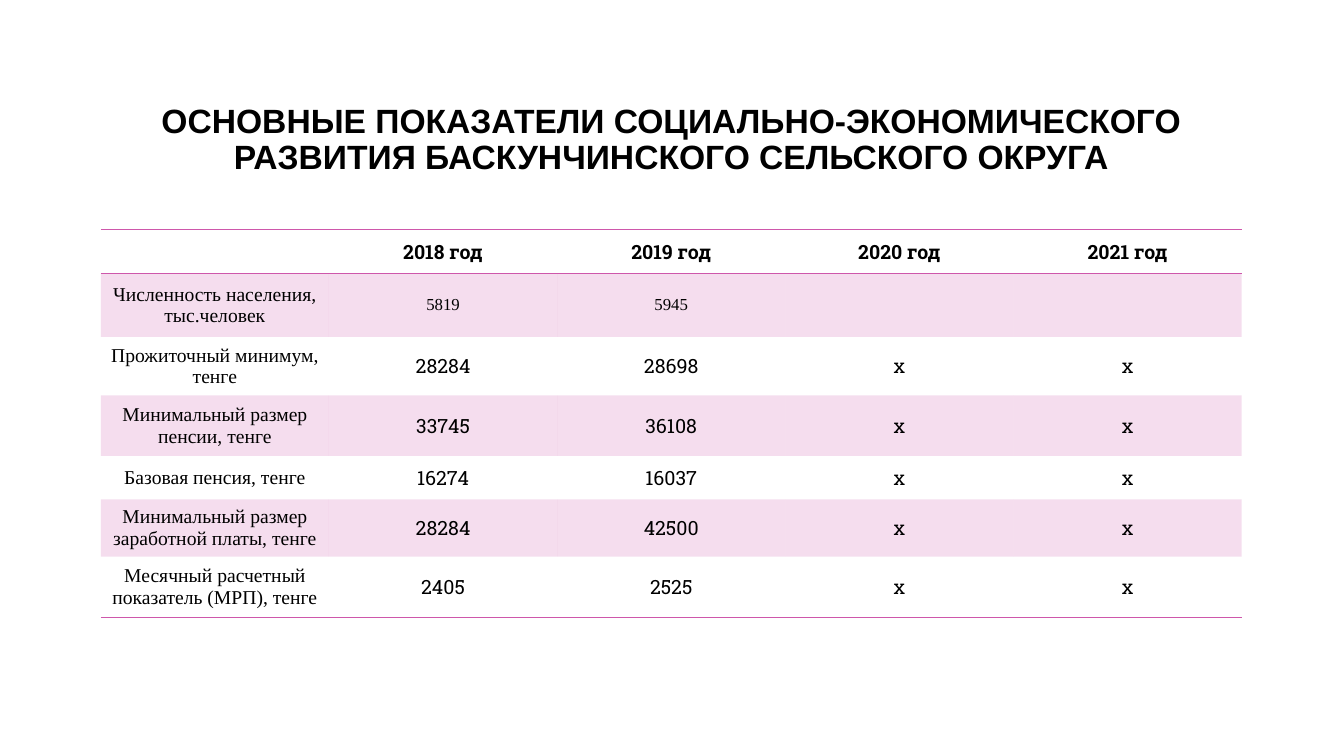
from dataclasses import dataclass
from lxml.etree import SubElement
from pptx import Presentation
from pptx.dml.color import RGBColor
from pptx.enum.text import MSO_ANCHOR, PP_ALIGN
from pptx.oxml import parse_xml
from pptx.oxml.ns import nsdecls, qn
from pptx.util import Pt


@dataclass
class Theme:
    ink: str = "000000"
    pink: str = "CE57AB"
    head: int = 24
    body: int = 14
    small: int = 12
    sans: str = "Arial"
    slab: str = "Roboto Slab"
    serif: str = "Times New Roman"


theme = Theme()


def style(para, face, size, bold=False):
    para.alignment = PP_ALIGN.CENTER
    font = para.font
    font.name, font.size, font.bold = face, Pt(size), bold
    font.color.rgb = RGBColor.from_string(theme.ink)


def rule(cell, tag):
    # Borders come before the fill in the cell properties
    cell._tc.get_or_add_tcPr().insert(0, parse_xml(
        f'<a:{tag} {nsdecls("a")} w="12700"><a:solidFill>'
        f'<a:srgbClr val="{theme.pink}"/></a:solidFill></a:{tag}>'))


deck = Presentation()
deck.slide_width, deck.slide_height = Pt(960), Pt(540)
slide = deck.slides.add_slide(deck.slide_layouts[5])

# Title
title = slide.shapes.title
title.left, title.top, title.width, title.height = Pt(72), Pt(48), Pt(815), Pt(104.4)
title.text = "ОСНОВНЫЕ ПОКАЗАТЕЛИ СОЦИАЛЬНО-ЭКОНОМИЧЕСКОГО РАЗВИТИЯ БАСКУНЧИНСКОГО СЕЛЬСКОГО ОКРУГА"
title.text_frame.vertical_anchor = MSO_ANCHOR.MIDDLE
para = title.text_frame.paragraphs[0]
para.line_spacing = 0.9
style(para, theme.sans, theme.head, True)

# Table data
rows = [
    ("", "2018 год", "2019 год", "2020 год", "2021 год"),
    ("Численность населения, тыс.человек", "5819", "5945", "", ""),
    ("Прожиточный минимум, тенге", "28284", "28698", "х", "х"),
    ("Минимальный размер пенсии, тенге", "33745", "36108", "х", "х"),
    ("Базовая пенсия, тенге", "16274", "16037", "х", "х"),
    ("Минимальный размер заработной платы, тенге", "28284", "42500", "х", "х"),
    ("Месячный расчетный показатель (МРП), тенге", "2405", "2525", "х", "х"),
]
highs = [31.3, 45.4, 41.8, 43.2, 31, 41, 43.2]

# Table frame without a built-in style
frame = slide.shapes.add_table(len(rows), 5, Pt(72), Pt(164), Pt(815), Pt(sum(highs)))
table = frame.table
table.first_row = table.horz_banding = False
table._tbl.tblPr.find(qn("a:tableStyleId")).text = "{2D5ABB26-0587-4C30-8999-92F81FD0307C}"
for col in table.columns:
    col.width = Pt(163)

# Cells
for r, (row, high) in enumerate(zip(rows, highs)):
    table.rows[r].height = Pt(high)
    for c, text in enumerate(row):
        cell = table.cell(r, c)
        cell.text = text
        cell.vertical_anchor = MSO_ANCHOR.MIDDLE
        cell.margin_left = cell.margin_right = Pt(5)
        cell.margin_top = cell.margin_bottom = 0
        face = theme.serif if c == 0 or r == 1 else theme.slab
        size = theme.small if r == 1 and c > 0 else theme.body
        style(cell.text_frame.paragraphs[0], face, size, r == 0)

        # Tint on every second row
        if r % 2:
            cell.fill.solid()
            cell.fill.fore_color.rgb = RGBColor.from_string(theme.pink)
            tint = cell._tc.tcPr.find(".//" + qn("a:srgbClr"))
            SubElement(tint, qn("a:alpha")).set("val", "20000")
        else:
            cell.fill.background()

        # Rules around the header and under the last row
        if r in (0, len(rows) - 1):
            rule(cell, "lnB")
        if r == 0:
            rule(cell, "lnT")

deck.save("out.pptx")
